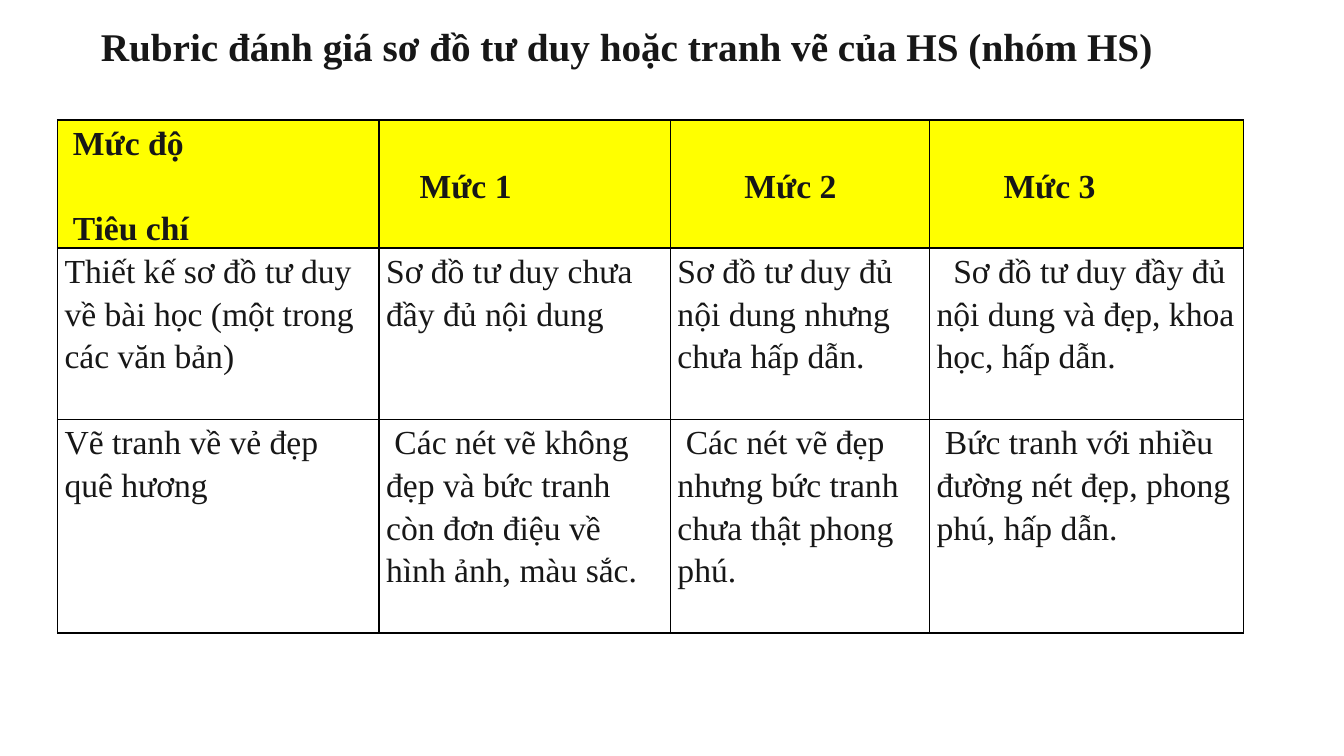
from lxml import etree
from pptx import Presentation
from pptx import util as u
from pptx.dml.color import RGBColor
from pptx.enum import text
from pptx.oxml.ns import qn

TITLE = "Rubric đánh giá sơ đồ tư duy hoặc tranh vẽ của HS (nhóm HS)"
FONT, INK, YELLOW, BLACK = "Times New Roman", "171717", "FFFF00", "000000"
SPACE = 0.083  # width of one space at 24 pt, the unit of indents

# Each cell: (paragraphs, first-line indent in spaces)
RUBRIC = [
    [(["Mức độ", "Tiêu chí"], 1), (["Mức 1"], 4), (["Mức 2"], 8), (["Mức 3"], 8)],
    [(["Thiết kế sơ đồ tư duy về bài học (một trong các văn bản)"], 0),
     (["Sơ đồ tư duy chưa đầy đủ nội dung"], 0),
     (["Sơ đồ tư duy đủ nội dung nhưng chưa hấp dẫn."], 0),
     (["Sơ đồ tư duy đầy đủ nội dung và đẹp, khoa học, hấp dẫn."], 2)],
    [(["Vẽ tranh về vẻ đẹp quê hương"], 0),
     (["Các nét vẽ không đẹp và bức tranh còn đơn điệu về hình ảnh, màu sắc."], 1),
     (["Các nét vẽ đẹp nhưng bức tranh chưa thật phong phú."], 1),
     (["Bức tranh với nhiều đường nét đẹp, phong phú, hấp dẫn."], 1)],
]
COLUMNS = [3.19, 2.89, 2.57, 3.11]
ROWS = [1.27, 1.7, 2.12]


def rgb(value):
    return RGBColor.from_string(value)


def write(paragraph, words, size, bold):
    run = paragraph.add_run()
    run.text = words
    run.font.name, run.font.size, run.font.bold = FONT, u.Pt(size), bold
    run.font.color.rgb = rgb(INK)


def draw_borders(cell):
    properties = cell._tc.get_or_add_tcPr()
    for position, side in enumerate(("lnL", "lnR", "lnT", "lnB")):
        line = etree.Element(qn("a:" + side), w=str(u.Pt(1)))
        fill = etree.SubElement(line, qn("a:solidFill"))
        etree.SubElement(fill, qn("a:srgbClr"), val=BLACK)
        properties.insert(position, line)


def fill_cell(cell, paragraphs, indent, header):
    cell.margin_left = cell.margin_right = u.Inches(0.07)
    cell.margin_top = cell.margin_bottom = 0
    if header:
        cell.fill.solid()
        cell.fill.fore_color.rgb = rgb(YELLOW)
        cell.vertical_anchor = text.MSO_ANCHOR.MIDDLE
    else:
        cell.fill.background()
    draw_borders(cell)
    for number, words in enumerate(paragraphs):
        frame = cell.text_frame
        paragraph = frame.add_paragraph() if number else frame.paragraphs[0]
        paragraph.line_spacing = 1.15
        if number:
            paragraph.space_before = u.Pt(30)
        paragraph._p.get_or_add_pPr().set("indent", str(u.Inches(indent * SPACE)))
        write(paragraph, words, 24, header)


def main():
    deck = Presentation()
    deck.slide_width, deck.slide_height = u.Inches(13.33), u.Inches(7.5)
    slide = deck.slides.add_slide(deck.slide_layouts[5])

    title = slide.shapes.title
    title.left, title.top = u.Inches(0.9), u.Inches(0.15)
    title.width, title.height = u.Inches(10.76), u.Inches(0.6)
    title.text_frame.word_wrap = False
    title.text_frame.vertical_anchor = text.MSO_ANCHOR.MIDDLE
    heading = title.text_frame.paragraphs[0]
    heading.alignment = text.PP_ALIGN.LEFT
    write(heading, TITLE, 28, True)

    table = slide.shapes.add_table(
        len(ROWS), len(COLUMNS), u.Inches(0.57), u.Inches(1.19),
        u.Inches(sum(COLUMNS)), u.Inches(sum(ROWS))).table
    table.first_row = table.horz_banding = False
    for column, width in zip(table.columns, COLUMNS):
        column.width = u.Inches(width)
    for row, height in zip(table.rows, ROWS):
        row.height = u.Inches(height)
    for r, criteria in enumerate(RUBRIC):
        for c, (paragraphs, indent) in enumerate(criteria):
            fill_cell(table.cell(r, c), paragraphs, indent, header=r == 0)

    deck.save("out.pptx")


if __name__ == "__main__":
    main()
